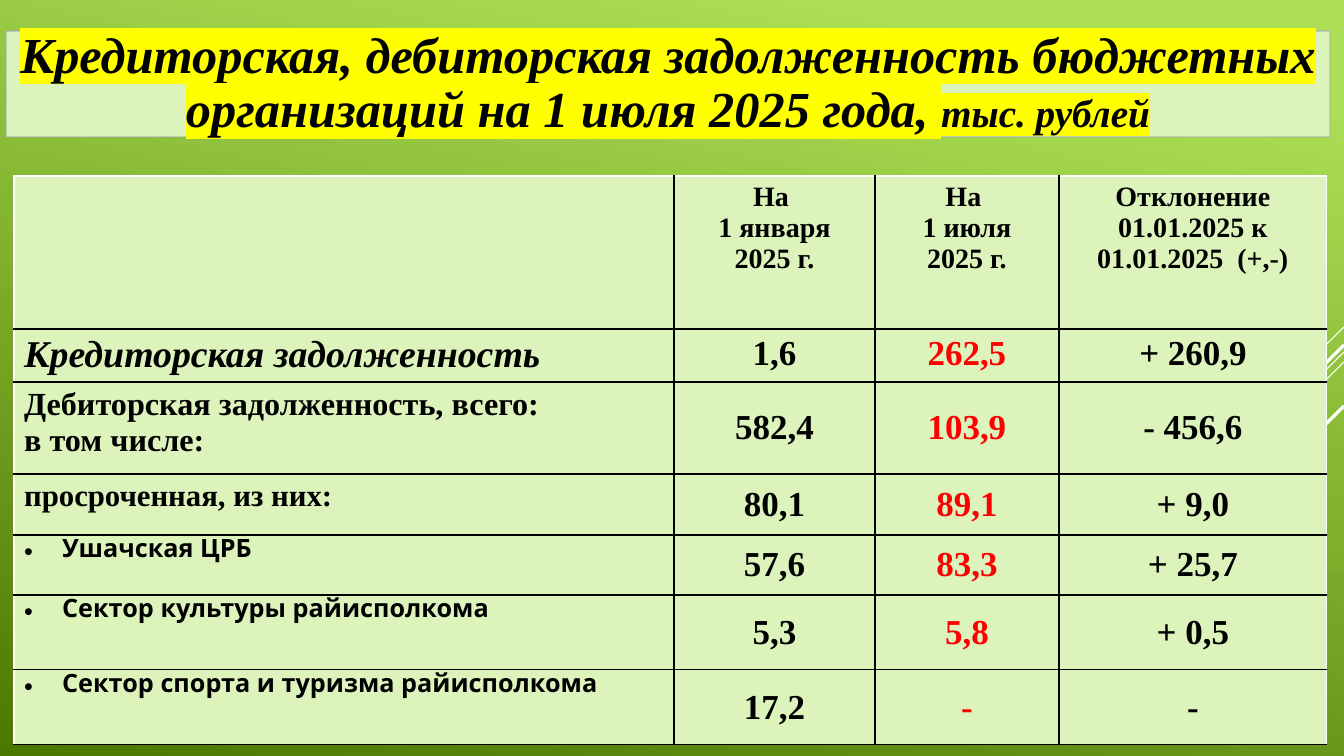
from lxml import etree
from pptx import Presentation
from pptx.dml.color import RGBColor
from pptx.enum.shapes import MSO_CONNECTOR
from pptx.enum.text import MSO_ANCHOR, MSO_AUTO_SIZE, PP_ALIGN
from pptx.oxml.ns import qn
from pptx.util import Emu, Pt

CENTER, LEFT, JUSTIFY = PP_ALIGN.CENTER, PP_ALIGN.LEFT, PP_ALIGN.JUSTIFY
TOP, MIDDLE = MSO_ANCHOR.TOP, MSO_ANCHOR.MIDDLE
STRAIGHT = MSO_CONNECTOR.STRAIGHT
NO_AUTOFIT = MSO_AUTO_SIZE.NONE

EMU_PER_PX = 914400 / 100.8
SLIDE_WIDTH, SLIDE_HEIGHT = 1344, 756
SERIF, SANS = "Times New Roman", "League Spartan"
BLACK, WHITE, RED = "000000", "FFFFFF", "FF0000"
PANEL, YELLOW, OUTLINE = "DDF3BC", "FFFF00", "9995B3"

# Decorative diagonals: start height on the right edge, run in px, width in points
DIAGONALS = [(327, 101, 0.75), (352, 329, 0.75), (362, 208, 0.75),
             (345, 192, 2.25), (406, 140, 2.25)]

COLUMN_WIDTHS = [660, 201, 184, 268]
ROW_HEIGHTS = [153, 53, 92, 61, 60, 75, 75]
HEADERS = [
    [],
    ["На ", "1 января", "2025 г."],
    ["На ", "1 июля", "2025 г."],
    ["Отклонение 01.01.2025 к 01.01.2025  (+,-)"],
]
# Label lines, label style, value anchor, values
ITEM = {"size": 18, "font": SANS, "align": JUSTIFY, "bullet": True}
ROWS = [
    (["Кредиторская задолженность"], {"size": 27, "italic": True, "align": LEFT},
     TOP, ["1,6", "262,5", "+ 260,9"]),
    (["Дебиторская задолженность, всего: ", "в том числе:"],
     {"size": 23, "align": JUSTIFY}, MIDDLE, ["582,4", "103,9", "- 456,6"]),
    (["просроченная, из них:"], {"size": 22, "align": JUSTIFY},
     MIDDLE, ["80,1", "89,1", "+ 9,0"]),
    (["Ушачская ЦРБ"], ITEM, MIDDLE, ["57,6", "83,3", "+ 25,7"]),
    (["Сектор культуры райисполкома"], ITEM, MIDDLE, ["5,3", "5,8", "+ 0,5"]),
    (["Сектор спорта и туризма райисполкома"], ITEM, MIDDLE, ["17,2", "-", "-"]),
]
VALUE_COLORS = [BLACK, RED, BLACK]


def px(length):
    return Emu(round(length * EMU_PER_PX))


def rgb(color):
    return RGBColor.from_string(color)


def add_run(paragraph, text, size, font=SERIF, color=BLACK, italic=False):
    run = paragraph.add_run()
    run.text = text
    run.font.size = Pt(size)
    run.font.name = font
    run.font.bold = True
    run.font.italic = italic
    run.font.color.rgb = rgb(color)
    return run


def highlight(run, color):
    fill = run.font.fill._xPr.find(qn("a:solidFill"))
    mark = etree.Element(qn("a:highlight"))
    etree.SubElement(mark, qn("a:srgbClr"), val=color)
    fill.addnext(mark)


def add_bullet(paragraph):
    properties = paragraph._p.get_or_add_pPr()
    properties.set("marL", str(px(38)))
    properties.set("indent", str(-px(38)))
    etree.SubElement(properties, qn("a:buFont"), typeface="Arial")
    etree.SubElement(properties, qn("a:buChar"), char="•")


def set_background(slide):
    fill = slide.background.fill
    fill.gradient()
    fill.gradient_angle = 258
    stops = [(0.1, "ACDF55"), (1, "4C7800")]
    for stop, (position, color) in zip(fill.gradient_stops, stops):
        stop.position = position
        stop.color.rgb = rgb(color)


def add_diagonal(slide, top, run_length, width):
    line = slide.shapes.add_connector(
        STRAIGHT, px(SLIDE_WIDTH), px(top),
        px(SLIDE_WIDTH - run_length), px(top + run_length))
    line.line.color.rgb = rgb(WHITE)
    line.line.width = Pt(width)
    etree.SubElement(line._element.spPr, qn("a:effectLst"))


def fill_title(title):
    title.left, title.top, title.width, title.height = map(px, (6, 31, 1324, 106))
    title.fill.solid()
    title.fill.fore_color.rgb = rgb(PANEL)
    title.line.color.rgb = rgb(OUTLINE)
    title.line.width = Pt(0.75)
    outline_color = title.line.fill._xPr.find(".//" + qn("a:srgbClr"))
    etree.SubElement(outline_color, qn("a:alpha"), val="60000")
    frame = title.text_frame
    frame.word_wrap = True
    frame.auto_size = NO_AUTOFIT
    frame.vertical_anchor = MIDDLE
    paragraph = frame.paragraphs[0]
    paragraph.alignment = CENTER
    paragraph.line_spacing = 0.9
    parts = [("Кредиторская, дебиторская задолженность бюджетных "
              "организаций на 1 июля 2025 года, ", 36), ("тыс. рублей", 28)]
    for text, size in parts:
        highlight(add_run(paragraph, text, size, italic=True), YELLOW)


def set_borders(cell, left, right, top, bottom):
    properties = cell._tc.get_or_add_tcPr()
    sides = [("L", left), ("R", right), ("T", top), ("B", bottom)]
    for index, (side, color) in enumerate(sides):
        border = etree.Element(qn("a:ln" + side), w=str(Pt(1)))
        fill = etree.SubElement(border, qn("a:solidFill"))
        etree.SubElement(fill, qn("a:srgbClr"), val=color)
        properties.insert(index, border)


def write_cell(cell, lines, size, align=CENTER, anchor=TOP, bullet=False, **style):
    cell.vertical_anchor = anchor
    frame = cell.text_frame
    for index, text in enumerate(lines):
        paragraph = frame.add_paragraph() if index else frame.paragraphs[0]
        paragraph.alignment = align
        if bullet:
            add_bullet(paragraph)
        add_run(paragraph, text, size, **style)


def add_debt_table(slide):
    frame = slide.shapes.add_table(
        len(ROW_HEIGHTS), len(COLUMN_WIDTHS), px(14), px(176),
        px(sum(COLUMN_WIDTHS)), px(sum(ROW_HEIGHTS)))
    table = frame.table
    table.first_row = table.horz_banding = False
    for column, width in zip(table.columns, COLUMN_WIDTHS):
        column.width = px(width)
    for row, height in zip(table.rows, ROW_HEIGHTS):
        row.height = px(height)

    # Fill and borders: white on the outer left, top and right edges
    last = len(COLUMN_WIDTHS) - 1
    for r, row in enumerate(table.rows):
        for c, cell in enumerate(row.cells):
            cell.fill.solid()
            cell.fill.fore_color.rgb = rgb(PANEL)
            set_borders(cell, left=BLACK if c else WHITE,
                        right=WHITE if c == last else BLACK,
                        top=BLACK if r else WHITE, bottom=BLACK)

    # Text
    for c, lines in enumerate(HEADERS):
        write_cell(table.cell(0, c), lines, 20)
    for r, (label, style, anchor, values) in enumerate(ROWS, start=1):
        write_cell(table.cell(r, 0), label, **style)
        for c, (value, color) in enumerate(zip(values, VALUE_COLORS), start=1):
            write_cell(table.cell(r, c), [value], 25, anchor=anchor, color=color)


def main():
    presentation = Presentation()
    presentation.slide_width = px(SLIDE_WIDTH)
    presentation.slide_height = px(SLIDE_HEIGHT)
    slide = presentation.slides.add_slide(presentation.slide_layouts[5])
    set_background(slide)
    for diagonal in DIAGONALS:
        add_diagonal(slide, *diagonal)
    fill_title(slide.shapes.title)
    add_debt_table(slide)
    presentation.save("out.pptx")


if __name__ == "__main__":
    main()
